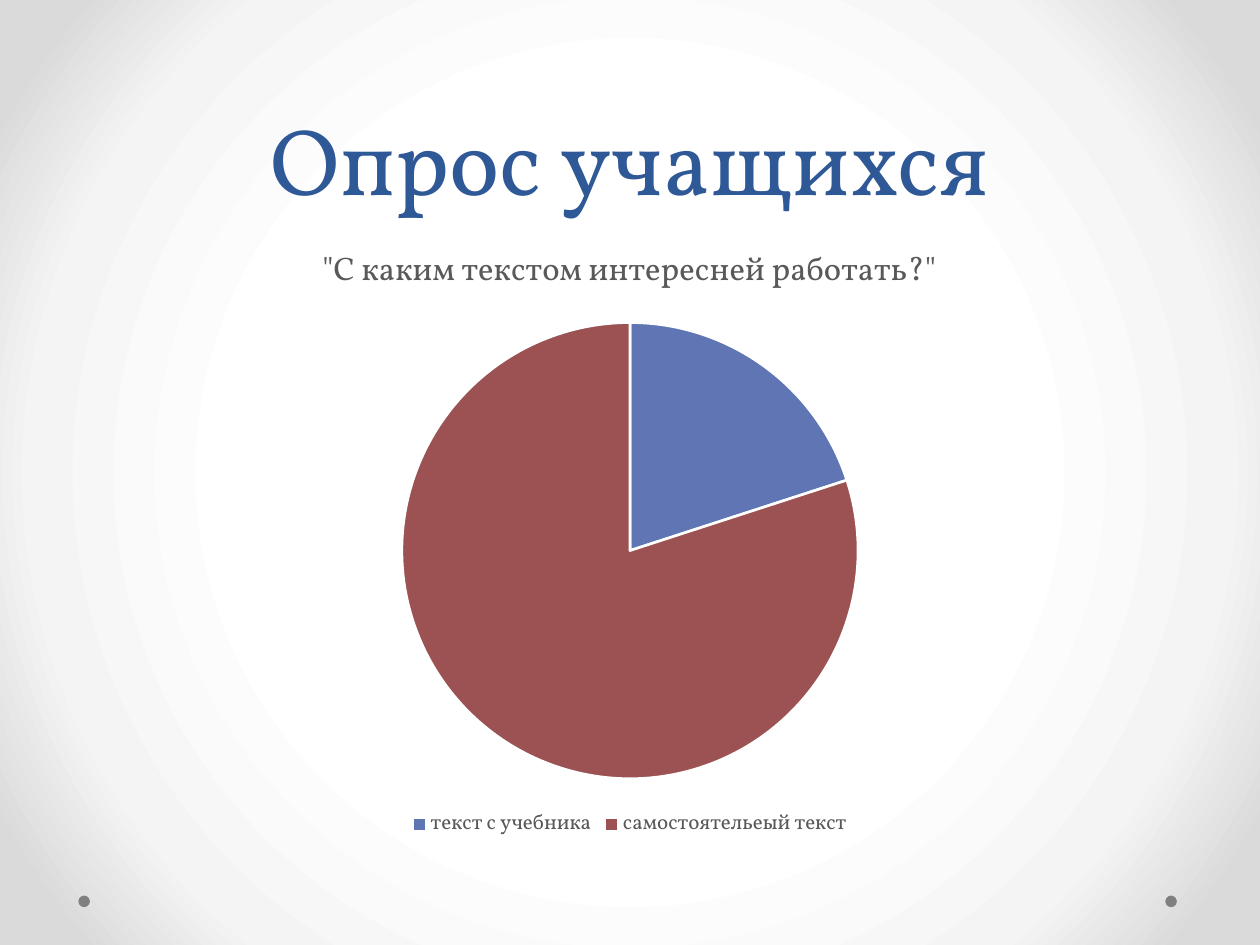
from lxml.etree import SubElement
from pptx import Presentation
from pptx.chart.data import CategoryChartData
from pptx.dml.color import RGBColor
from pptx.enum.chart import XL_CHART_TYPE, XL_LEGEND_POSITION
from pptx.enum.shapes import MSO_SHAPE
from pptx.enum.text import MSO_ANCHOR, PP_ALIGN
from pptx.oxml.ns import qn
from pptx.util import Pt

FONT = "Vollkorn"
COLORS = {
    "title": "2F5897",
    "text": "595959",
    "dot": "808080",
    "border": "FFFFFF",
    "textbook": "6076B4",
    "own": "9C5252",
}
BACKDROP_STOPS = [(50, "FFFFFF"), (76, "F4F4F4"), (92, "DADADA")]
QUESTION = '"С каким текстом интересней работать?"'
ANSWERS = [("текст с учебника", 20, "textbook"), ("самостоятельеый текст", 80, "own")]


def color(name):
    return RGBColor.from_string(COLORS[name])


def style_font(font, size, color_name):
    font.name = FONT
    font.size = Pt(size)
    font.bold = False
    font.color.rgb = color(color_name)


def place(part, box):
    part.left, part.top, part.width, part.height = map(Pt, box)


def paint_backdrop(slide):
    slide.background.fill.gradient()
    gradient = slide.element.find(".//" + qn("a:gradFill"))
    for child in list(gradient):
        gradient.remove(child)
    stops = SubElement(gradient, qn("a:gsLst"))
    for percent, tone in BACKDROP_STOPS:
        stop = SubElement(stops, qn("a:gs"), pos=str(percent * 1000))
        SubElement(stop, qn("a:srgbClr"), val=tone)
    path = SubElement(gradient, qn("a:path"), path="circle")
    SubElement(path, qn("a:fillToRect"), {side: "50000" for side in "ltrb"})


def add_corner_dots(slide, box):
    left, top, width, size = box
    for x in (left, left + width - size):
        dot = slide.shapes.add_shape(MSO_SHAPE.OVAL, Pt(x), Pt(top), Pt(size), Pt(size))
        dot.shadow.inherit = False
        dot.fill.solid()
        dot.fill.fore_color.rgb = color("dot")
        dot.line.fill.background()


def add_heading(slide, box):
    heading = slide.shapes.title
    place(heading, box)
    frame = heading.text_frame
    frame.vertical_anchor = MSO_ANCHOR.BOTTOM
    paragraph = frame.paragraphs[0]
    paragraph.alignment = PP_ALIGN.CENTER
    paragraph.line_spacing = Pt(58)
    run = paragraph.add_run()
    run.text = "Опрос учащихся"
    style_font(run.font, 54, "title")


def add_survey_pie(slide, box):
    survey = CategoryChartData()
    survey.categories = [answer for answer, _, _ in ANSWERS]
    survey.add_series(QUESTION, [share for _, share, _ in ANSWERS])
    chart = slide.shapes.add_chart(XL_CHART_TYPE.PIE, *map(Pt, box), survey).chart
    style_font(chart.font, 10, "text")

    chart.has_title = True
    run = chart.chart_title.text_frame.paragraphs[0].add_run()
    run.text = QUESTION
    style_font(run.font, 18.6, "text")
    chart.chart_title.include_in_layout = False

    chart.has_legend = True
    chart.legend.position = XL_LEGEND_POSITION.BOTTOM
    chart.legend.include_in_layout = False
    style_font(chart.legend.font, 12, "text")

    plot = chart.plots[0]
    plot.vary_by_categories = True
    for index, (_, _, tone) in enumerate(ANSWERS):
        slice_format = plot.series[0].points[index].format
        slice_format.fill.solid()
        slice_format.fill.fore_color.rgb = color(tone)
        slice_format.line.color.rgb = color("border")
        slice_format.line.width = Pt(1.5)


def main():
    deck = Presentation()
    deck.slide_width, deck.slide_height = Pt(720), Pt(540)
    slide = deck.slides.add_slide(deck.slide_layouts[5])
    paint_backdrop(slide)
    add_corner_dots(slide, (44.8, 511.8, 627.7, 6.6))
    add_heading(slide, (36, 0, 648, 126))
    add_survey_pie(slide, (36, 126, 648, 356.4))
    deck.save("out.pptx")


if __name__ == "__main__":
    main()
